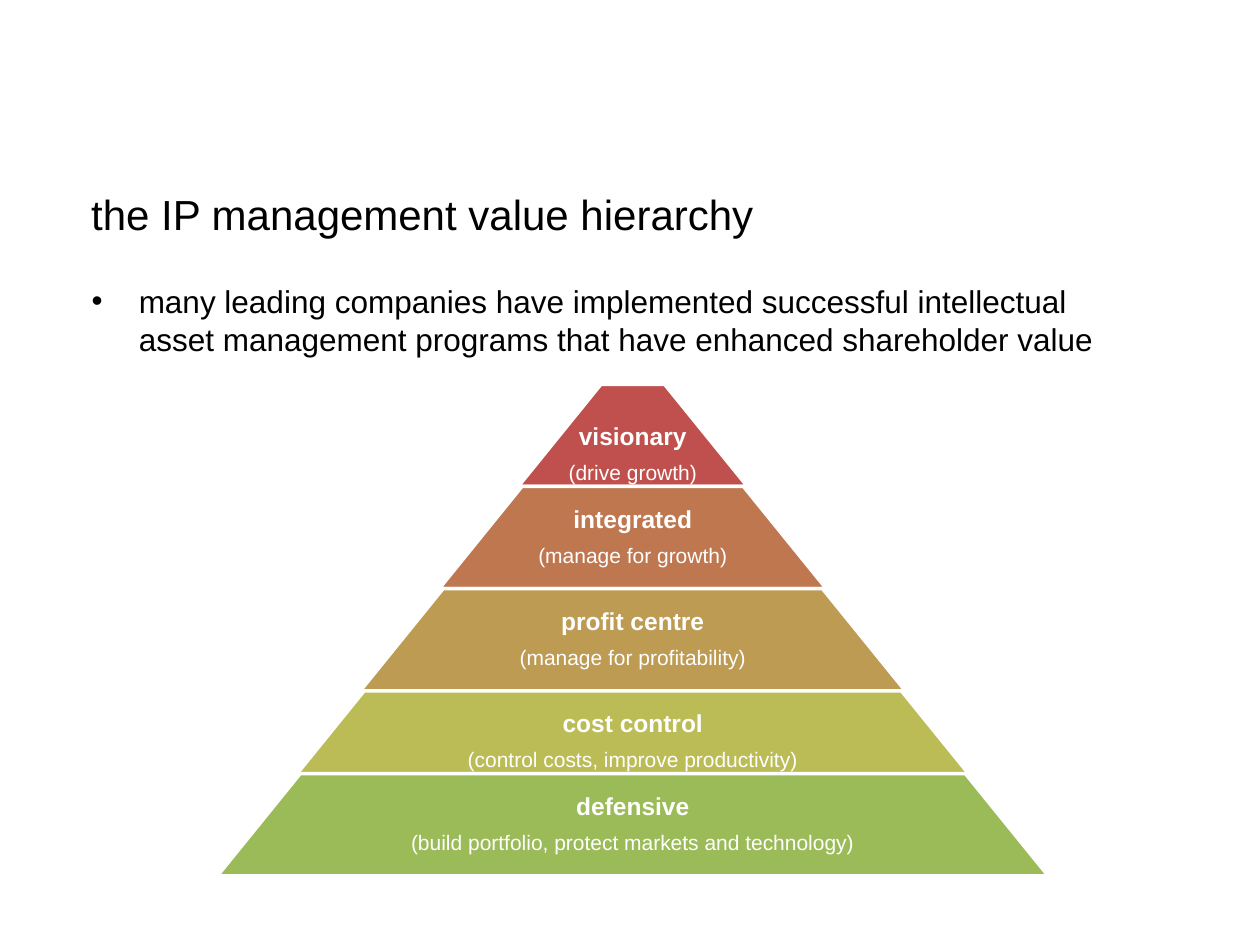
from pptx import Presentation
from pptx.dml.color import RGBColor
from pptx.enum.shapes import MSO_SHAPE
from pptx.enum.text import MSO_ANCHOR, PP_ALIGN
from pptx.oxml.ns import qn
from pptx.util import Pt
from lxml import etree

TRAPEZOID = MSO_SHAPE.TRAPEZOID
MIDDLE, TOP = MSO_ANCHOR.MIDDLE, MSO_ANCHOR.TOP
LEFT, CENTER = PP_ALIGN.LEFT, PP_ALIGN.CENTER

BLACK, WHITE = "000000", "FFFFFF"
TITLE = "the IP management value hierarchy"
STATEMENT = ("many leading companies have implemented successful intellectual "
             "asset management programs that have enhanced shareholder value")

# level, aim, fill, top
TIERS = [
    ("visionary", "(drive growth)", "C0504D", 219.6),
    ("integrated", "(manage for growth)", "BF7750", 278),
    ("profit centre", "(manage for profitability)", "BD9B53", 336.4),
    ("cost control", "(control costs, improve productivity)", "BCBC56", 394.8),
    ("defensive", "(build portfolio, protect markets and technology)", "9BBB59", 442.1),
]
TIER_HEIGHT = 58.4
PYRAMID_CENTER = 361.6
APEX_WIDTH = 131
WIDENING = 1.545  # width gained per point of descent
LABEL_SHARE = 0.65
LABEL_INSET = 1.5
APEX_DROP = 22  # keeps the first label in the wide part of its tier


def color(hex_code):
    return RGBColor.from_string(hex_code)


def set_values(target, values):
    for name, value in values.items():
        setattr(target, name, value)


def add_text_frame(slide, left, top, width, height, anchor):
    box = slide.shapes.add_textbox(Pt(left), Pt(top), Pt(width), Pt(height))
    set_values(box.text_frame, {"word_wrap": True, "vertical_anchor": anchor})
    return box.text_frame


def write(paragraph, text, size, hex_code, bold=False, **layout):
    paragraph.text = text
    set_values(paragraph, layout)
    set_values(paragraph.font, {"name": "Arial", "size": Pt(size), "bold": bold})
    paragraph.font.color.rgb = color(hex_code)


def add_bullet(paragraph, indent):
    properties = paragraph._p.get_or_add_pPr()
    properties.set("marL", str(Pt(indent)))
    properties.set("indent", str(-Pt(indent)))
    font = etree.SubElement(properties, qn("a:buFont"))
    font.set("typeface", "Arial")
    etree.SubElement(properties, qn("a:buChar")).set("char", "•")


def add_tier(slide, top, width, fill):
    tier = slide.shapes.add_shape(
        TRAPEZOID, Pt(PYRAMID_CENTER - width / 2), Pt(top), Pt(width), Pt(TIER_HEIGHT))
    tier.adjustments[0] = 0.81
    tier.shadow.inherit = False
    tier.fill.solid()
    tier.fill.fore_color.rgb = color(fill)
    tier.line.color.rgb = color(WHITE)
    tier.line.width = Pt(2)


def add_tier_label(slide, top, width, level, aim, drop):
    frame = add_text_frame(
        slide, PYRAMID_CENTER - width / 2, top, width, TIER_HEIGHT, MIDDLE)
    set_values(frame, {
        "margin_left": Pt(LABEL_INSET),
        "margin_right": Pt(LABEL_INSET),
        "margin_top": Pt(LABEL_INSET + drop),
        "margin_bottom": Pt(LABEL_INSET),
    })
    layout = {"alignment": CENTER, "line_spacing": 0.9}
    write(frame.paragraphs[0], level, 14, WHITE, bold=True,
          space_after=Pt(6.4), **layout)
    write(frame.add_paragraph(), aim, 12, WHITE, **layout)


def add_pyramid(slide):
    apex_top = TIERS[0][3]
    for level, aim, fill, top in TIERS:
        width = APEX_WIDTH + WIDENING * (top - apex_top)
        add_tier(slide, top, width, fill)
        add_tier_label(slide, top, max(APEX_WIDTH, LABEL_SHARE * width), level, aim,
                       APEX_DROP if top == apex_top else 0)


def main():
    deck = Presentation()
    set_values(deck, {"slide_width": Pt(720), "slide_height": Pt(540)})
    slide = deck.slides.add_slide(deck.slide_layouts[6])

    title = add_text_frame(slide, 45, 100, 585, 44, MIDDLE)
    write(title.paragraphs[0], TITLE, 24, BLACK, alignment=LEFT)

    statement = add_text_frame(slide, 45.2, 157.7, 608, 298, TOP).paragraphs[0]
    add_bullet(statement, 27)
    write(statement, STATEMENT, 18, BLACK, alignment=LEFT)

    add_pyramid(slide)
    deck.save("out.pptx")


if __name__ == "__main__":
    main()
